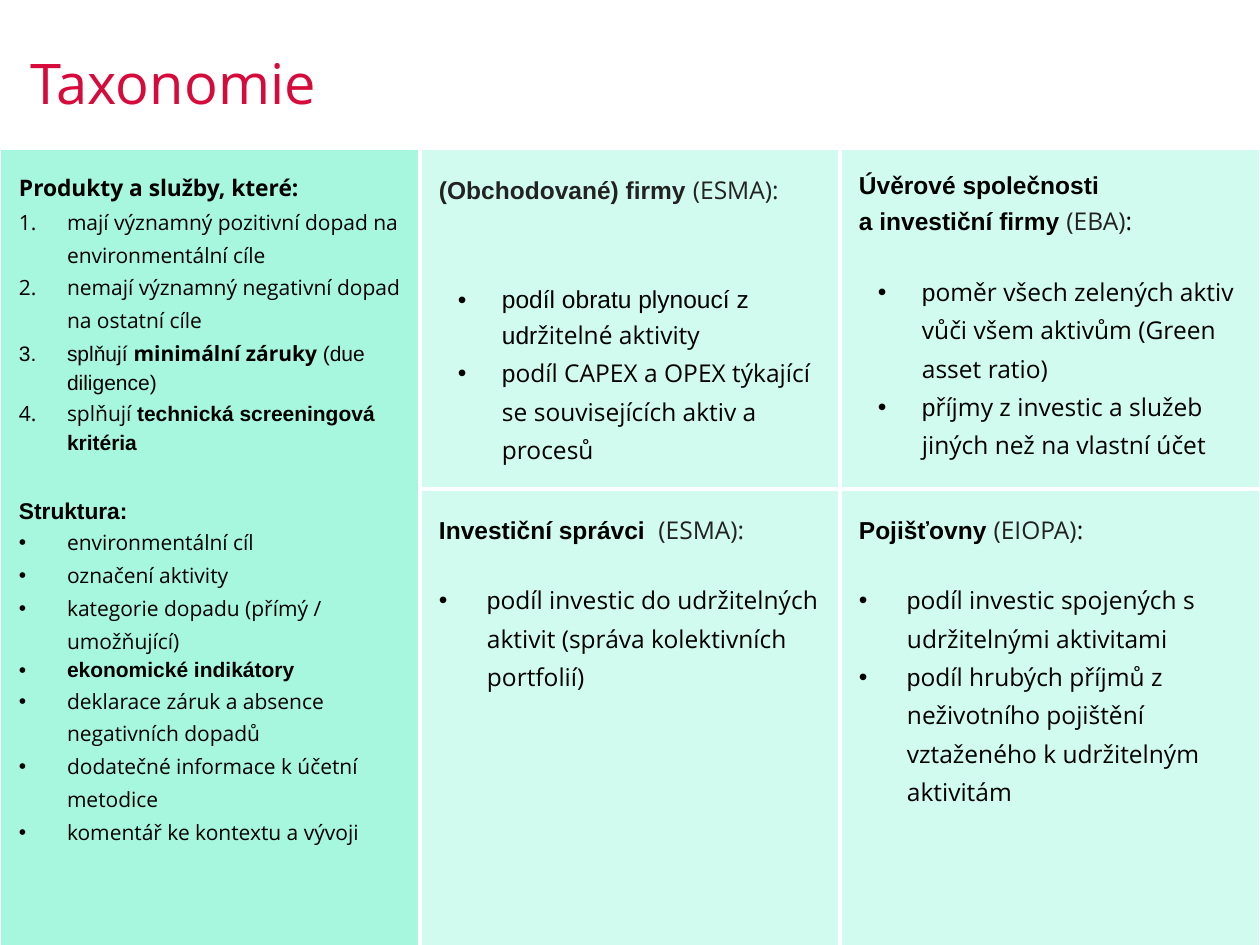
from pptx import Presentation
from pptx import util as u
from pptx.dml.color import RGBColor
from pptx.enum import text
from pptx.oxml.ns import qn
from lxml import etree

PX = 914400 // 126
W, H = 1260, 945
COLORS = {"title": "D70B3B", "black": "000000", "grey": "222222",
          "main": "A7F7DE", "light": "D1FBEE", "border": "FFFFFF"}
FONTS = {"a": "Arial", "o": "Open Sans"}
LISTS = {"head": None, "num": (48, -48), "bullet": (48, -48), "inset": (63, -44)}

# Paragraph: list kind, size, space before, runs.
# Run style: a = Arial, o = Open Sans, b = bold, g = grey.
MAIN = [
    ("head", 13, 0, [("Produkty a služby, které:", "ob")]),
    ("num", 12, 0, [("mají významný pozitivní dopad na environmentální cíle", "o")]),
    ("num", 12, 0, [("nemají významný negativní dopad na ostatní cíle", "o")]),
    ("num", 12, 0, [("splňují ", "a"), ("minimální záruky ", "ob"), ("(due diligence)", "a")]),
    ("num", 12, 0, [("splňují ", "o"), ("technická screeningová kritéria", "ab")]),
    ("head", 13, 23, [("Struktura:", "ab")]),
    ("bullet", 12, 0, [("environmentální cíl", "o")]),
    ("bullet", 12, 0, [("označení aktivity", "o")]),
    ("bullet", 12, 0, [("kategorie dopadu (přímý / umožňující)", "o")]),
    ("bullet", 12, 0, [("ekonomické indikátory", "ab")]),
    ("bullet", 12, 0, [("deklarace záruk a absence negativních dopadů", "o")]),
    ("bullet", 12, 0, [("dodatečné informace k účetní metodice", "o")]),
    ("bullet", 12, 0, [("komentář ke kontextu a vývoji", "o")]),
]
COMPANIES = [
    ("head", 14, 0, [("(Obchodované) firmy ", "abg"), ("(ESMA):", "og")]),
    ("inset", 14, 43, [("podíl obratu plynoucí z udr", "a"), ("žitelné aktivity", "o")]),
    ("inset", 14, 0, [("p", "a"), ("odíl CAPEX a OPEX týkající se souvisejících aktiv a procesů", "o")]),
]
CREDIT = [
    ("head", 14, 0, [("Úvěrové společnosti", "ab")]),
    ("head", 14, 0, [("a investiční firmy ", "ab"), ("(EBA)", "og"), (":", "o")]),
    ("inset", 14, 18.5, [("p", "a"), ("oměr všech zelených aktiv vůči všem aktivům (Green asset ratio)", "o")]),
    ("inset", 14, 0, [("p", "a"), ("říjmy z investic a služeb jiných než na vlastní účet", "o")]),
]
MANAGERS = [
    ("head", 14, 0, [("Investiční správci ", "ab"), (" (ESMA):", "og")]),
    ("bullet", 14, 18.5, [("p", "a"), ("odíl investic do udržitelných aktivit (správa kolektivních portfolií)", "o")]),
]
INSURERS = [
    ("head", 14, 0, [("Pojišťovny ", "ab"), ("(EIOPA)", "og"), (":", "o")]),
    ("bullet", 14, 18.5, [("p", "a"), ("odíl investic spojených s udržitelnými aktivitami", "o")]),
    ("bullet", 14, 0, [("p", "a"), ("odíl hrubých příjmů z neživotního pojištění vztaženého k udržitelným aktivitám", "o")]),
]
GRID = [[MAIN, COMPANIES, CREDIT], [None, MANAGERS, INSURERS]]
ROWS = [340, 292]


def px(n):
    return u.Emu(n * PX)


def rgb(name):
    return RGBColor.from_string(COLORS[name])


def add_marker(p, kind):
    pPr = p._p.get_or_add_pPr()
    left, hang = LISTS[kind]
    pPr.set("marL", str(px(left)))
    pPr.set("indent", str(px(hang)))
    clr = etree.SubElement(pPr, qn("a:buClr"))
    etree.SubElement(clr, qn("a:srgbClr"), val=COLORS["black"])
    if kind == "num":
        etree.SubElement(pPr, qn("a:buAutoNum"), type="arabicPeriod")
    else:
        etree.SubElement(pPr, qn("a:buFont"), typeface="Arial")
        etree.SubElement(pPr, qn("a:buChar"), char="•")


def write(tf, paragraphs):
    for i, (kind, size, before, runs) in enumerate(paragraphs):
        p = tf.add_paragraph() if i else tf.paragraphs[0]
        if LISTS[kind]:
            add_marker(p, kind)
        p.line_spacing = 1.15
        if before:
            p.space_before = u.Pt(before)
        for words, style in runs:
            r = p.add_run()
            r.text = words
            r.font.name = FONTS[style[0]]
            r.font.size = u.Pt(size)
            r.font.bold = "b" in style
            r.font.color.rgb = rgb("grey" if "g" in style else "black")


def set_borders(cell, widths):
    tcPr = cell._tc.get_or_add_tcPr()
    for side, width in zip("LRTB", widths):
        ln = etree.SubElement(tcPr, qn("a:ln" + side), w=str(u.Pt(width)))
        fill = etree.SubElement(ln, qn("a:solidFill"))
        etree.SubElement(fill, qn("a:srgbClr"), val=COLORS["border"])


prs = Presentation()
prs.slide_width, prs.slide_height = px(W), px(H)
s = prs.slides.add_slide(prs.slide_layouts[5])

title = s.shapes.title
title.left, title.top, title.width, title.height = px(30), px(57), px(669), px(60)
tf = title.text_frame
tf.text = "Taxonomie"
tf.margin_left = tf.margin_right = tf.margin_top = tf.margin_bottom = 0
tf.vertical_anchor = text.MSO_ANCHOR.BOTTOM
tf.auto_size = text.MSO_AUTO_SIZE.SHAPE_TO_FIT_TEXT
p = tf.paragraphs[0]
p.alignment = text.PP_ALIGN.LEFT
p.line_spacing = 0.9
r = p.runs[0]
r.font.name, r.font.size = FONTS["o"], u.Pt(32)
r.font.color.rgb = rgb("title")

table = s.shapes.add_table(2, 3, 0, px(149), px(W), px(659)).table
table.first_row = table.horz_banding = False
for col in table.columns:
    col.width = px(W // 3)
for row, height in zip(table.rows, ROWS):
    row.height = px(height)
table.cell(0, 0).merge(table.cell(1, 0))

for i, line in enumerate(GRID):
    for j, paragraphs in enumerate(line):
        cell = table.cell(i, j)
        cell.margin_left = cell.margin_right = px(19)
        cell.margin_top = cell.margin_bottom = px(19)
        set_borders(cell, [3 if inner else 1 for inner in (j > 0, j < 2, i > 0, i < 1)])
        cell.fill.solid()
        cell.fill.fore_color.rgb = rgb("light" if j else "main")
        if paragraphs:
            write(cell.text_frame, paragraphs)

prs.save("out.pptx")
